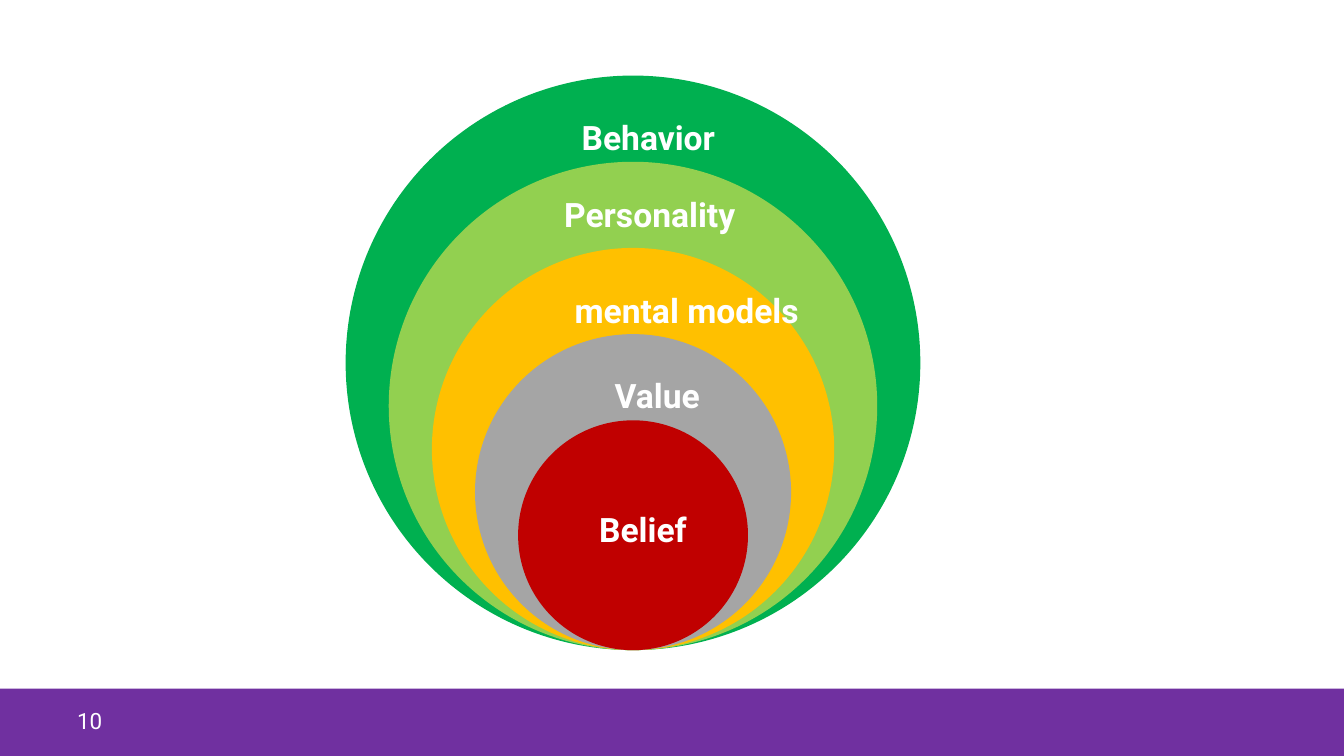
from pptx import Presentation
from pptx.dml.color import RGBColor
from pptx.enum.shapes import MSO_SHAPE
from pptx.enum.text import MSO_ANCHOR, MSO_AUTO_SIZE, PP_ALIGN
from pptx.util import Inches, Pt

COLOURS = {
    "behavior": "00B050",
    "personality": "92D050",
    "models": "FFC000",
    "value": "A5A5A5",
    "belief": "C00000",
    "footer": "7030A0",
    "text": "FFFFFF",
}

# Layers from the outside in: colour, label, label's left, top and width
LAYERS = [
    ("behavior", "Behavior", 41.94, 14.8, 12),
    ("personality", "Personality", 40.81, 24.93, 14.63),
    ("models", "mental models", 41.34, 37.73, 18.83),
    ("value", "Value", 44.86, 48.93, 7.95),
    ("belief", "Belief", 43.51, 66.67, 8.33),
]
LABEL_HEIGHT = 6.67

# Nested circles share their lowest point; each is smaller by a fixed step
CENTRE_X, BOTTOM_Y = 47.1, 86
DIAMETER, SHRINK = 76, 0.15


class SlideBuilder:
    """Holds the style and the page; lengths are percentages of the slide."""

    font_name = "Roboto"

    def __init__(self, deck):
        self.deck = deck
        self.page = deck.slides.add_slide(deck.slide_layouts[6])

    def across(self, share):
        return round(self.deck.slide_width * share / 100)

    def down(self, share):
        return round(self.deck.slide_height * share / 100)

    def shape(self, parent, kind, colour, left, top, width, height):
        shape = parent.shapes.add_shape(kind, left, top, width, height)
        shape.shadow.inherit = False
        shape.fill.solid()
        shape.fill.fore_color.rgb = RGBColor.from_string(COLOURS[colour])
        shape.line.fill.background()

    def bar(self, colour, top, height):
        self.shape(self.page, MSO_SHAPE.RECTANGLE, colour, 0, self.down(top),
                   self.deck.slide_width, self.down(height))

    def circle(self, group, colour, centre, bottom, diameter):
        size = self.down(diameter)
        self.shape(group, MSO_SHAPE.OVAL, colour, self.across(centre) - size // 2,
                   self.down(bottom) - size, size, size)

    def text(self, words, left, top, width, height, frame_format, font_format):
        box = self.page.shapes.add_textbox(self.across(left), self.down(top),
                                           self.across(width), self.down(height))
        for name, value in frame_format.items():
            setattr(box.text_frame, name, value)
        para = box.text_frame.paragraphs[0]
        para.alignment = PP_ALIGN.RIGHT
        span = para.add_run()
        span.text = words
        for name, value in {"name": self.font_name, **font_format}.items():
            setattr(span.font, name, value)
        span.font.color.rgb = RGBColor.from_string(COLOURS["text"])


def main():
    deck = Presentation()
    deck.slide_width, deck.slide_height = Inches(13.33), Inches(7.5)
    builder = SlideBuilder(deck)

    # Footer with the page number
    builder.bar("footer", 91.1, 8.9)
    builder.text("10", 2.8, 92.67, 5.55, 5.2,
                 {"word_wrap": True, "vertical_anchor": MSO_ANCHOR.MIDDLE},
                 {"size": Pt(16)})

    # Nested circles
    circles = builder.page.shapes.add_group_shape()
    for level, (colour, *_) in enumerate(LAYERS):
        builder.circle(circles, colour, CENTRE_X, BOTTOM_Y,
                       DIAMETER * (1 - SHRINK * level))

    # Labels
    for _, label, left, top, width in LAYERS:
        builder.text(label, left, top, width, LABEL_HEIGHT,
                     {"word_wrap": False, "auto_size": MSO_AUTO_SIZE.SHAPE_TO_FIT_TEXT},
                     {"size": Pt(24), "bold": True})

    deck.save("out.pptx")


if __name__ == "__main__":
    main()
